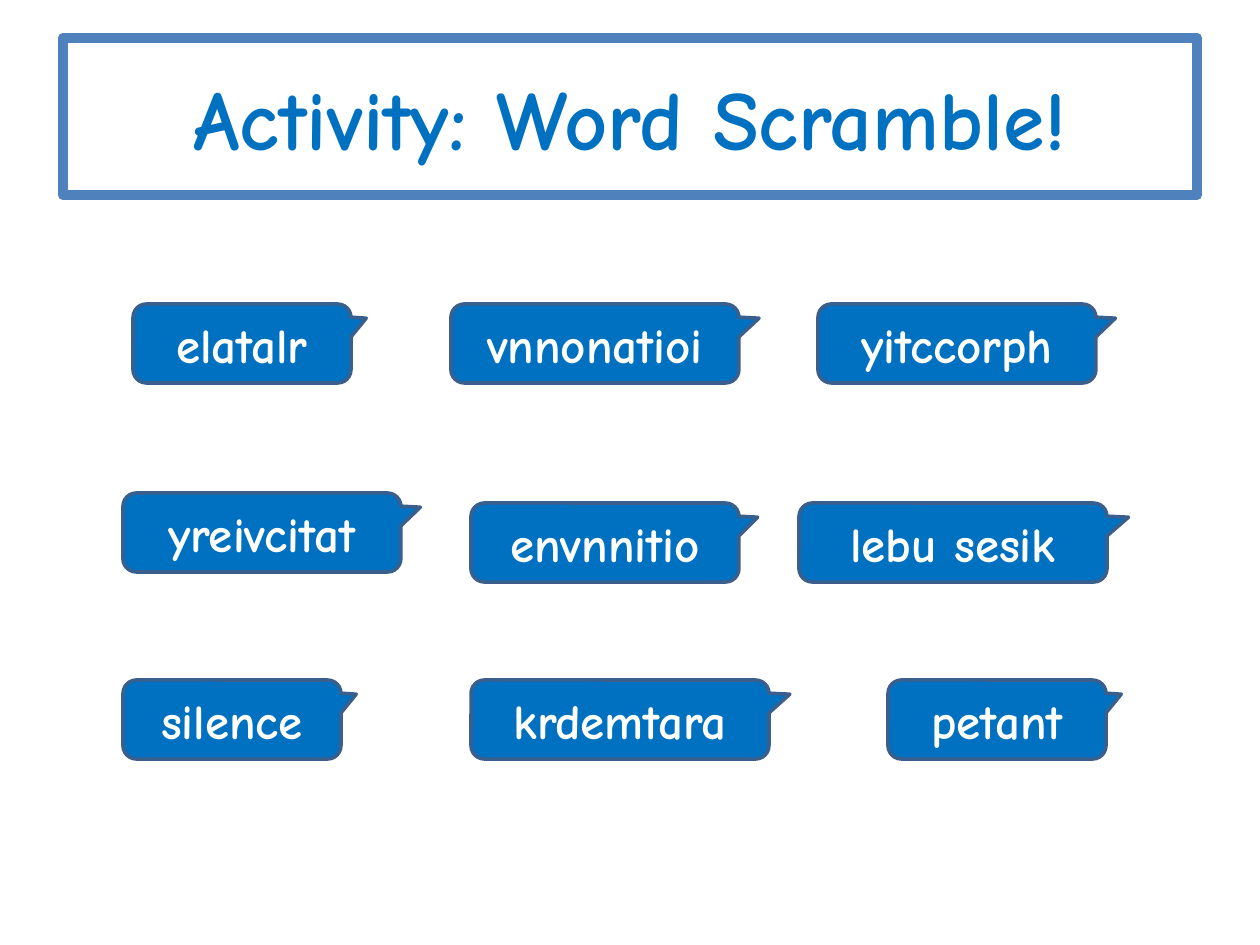
from pptx import Presentation
from pptx.dml.color import RGBColor
from pptx.enum.shapes import MSO_SHAPE
from pptx.enum.text import MSO_ANCHOR, PP_ALIGN
from pptx.util import Emu, Pt

PX = 914400 // 126
FONT = "Comic Neue"
BLUE, WHITE = "0070C0", "FFFFFF"
TITLE_EDGE, CALLOUT_EDGE = "4F81BD", "3A5F8C"
CALLOUT_HEIGHT = 79
TAIL_AND_CORNER = (0.57, -0.32, 0.17)

# Each word: text, left, top, width
WORDS = [
    ("elatalr", 133, 304, 218),
    ("vnnonatioi", 451, 304, 288),
    ("yitccorph", 818, 304, 278),
    ("yreivcitat", 123, 493, 278),
    ("envnnitio", 471, 503, 268),
    ("lebu sesik", 799, 503, 308),
    ("silence", 123, 680, 218),
    ("krdemtara", 471, 680, 298),
    ("petant", 888, 680, 218),
]


def color(hex_code):
    return RGBColor.from_string(hex_code)


def add_label(page, kind, box, text, size, ink, fill, edge, edge_width):
    """Add a filled, outlined shape with one centred bold line of text."""
    shape = page.shapes.add_shape(kind, *(Emu(side * PX) for side in box))
    shape.shadow.inherit = False
    shape.fill.solid()
    shape.fill.fore_color.rgb = color(fill)
    shape.line.color.rgb = color(edge)
    shape.line.width = Pt(edge_width)

    frame = shape.text_frame
    frame.text = text
    frame.word_wrap = True
    frame.vertical_anchor = MSO_ANCHOR.MIDDLE
    para = frame.paragraphs[0]
    para.alignment = PP_ALIGN.CENTER
    font = para.runs[0].font
    font.name, font.size, font.bold = FONT, Pt(size), True
    font.color.rgb = color(ink)
    return shape


def add_title(page, box):
    add_label(page, MSO_SHAPE.RECTANGLE, box, "Activity: Word Scramble!",
              48, BLUE, WHITE, TITLE_EDGE, 6)


def add_word(page, box, word):
    callout = add_label(page, MSO_SHAPE.ROUNDED_RECTANGULAR_CALLOUT, box, word,
                        28, WHITE, BLUE, CALLOUT_EDGE, 2)
    for index, value in enumerate(TAIL_AND_CORNER):
        callout.adjustments[index] = value


def main():
    deck = Presentation()
    deck.slide_width, deck.slide_height = Emu(1260 * PX), Emu(945 * PX)
    page = deck.slides.add_slide(deck.slide_layouts[6])
    add_title(page, (63, 38, 1134, 157))
    for word, left, top, width in WORDS:
        add_word(page, (left, top, width, CALLOUT_HEIGHT), word)
    deck.save("out.pptx")


if __name__ == "__main__":
    main()
